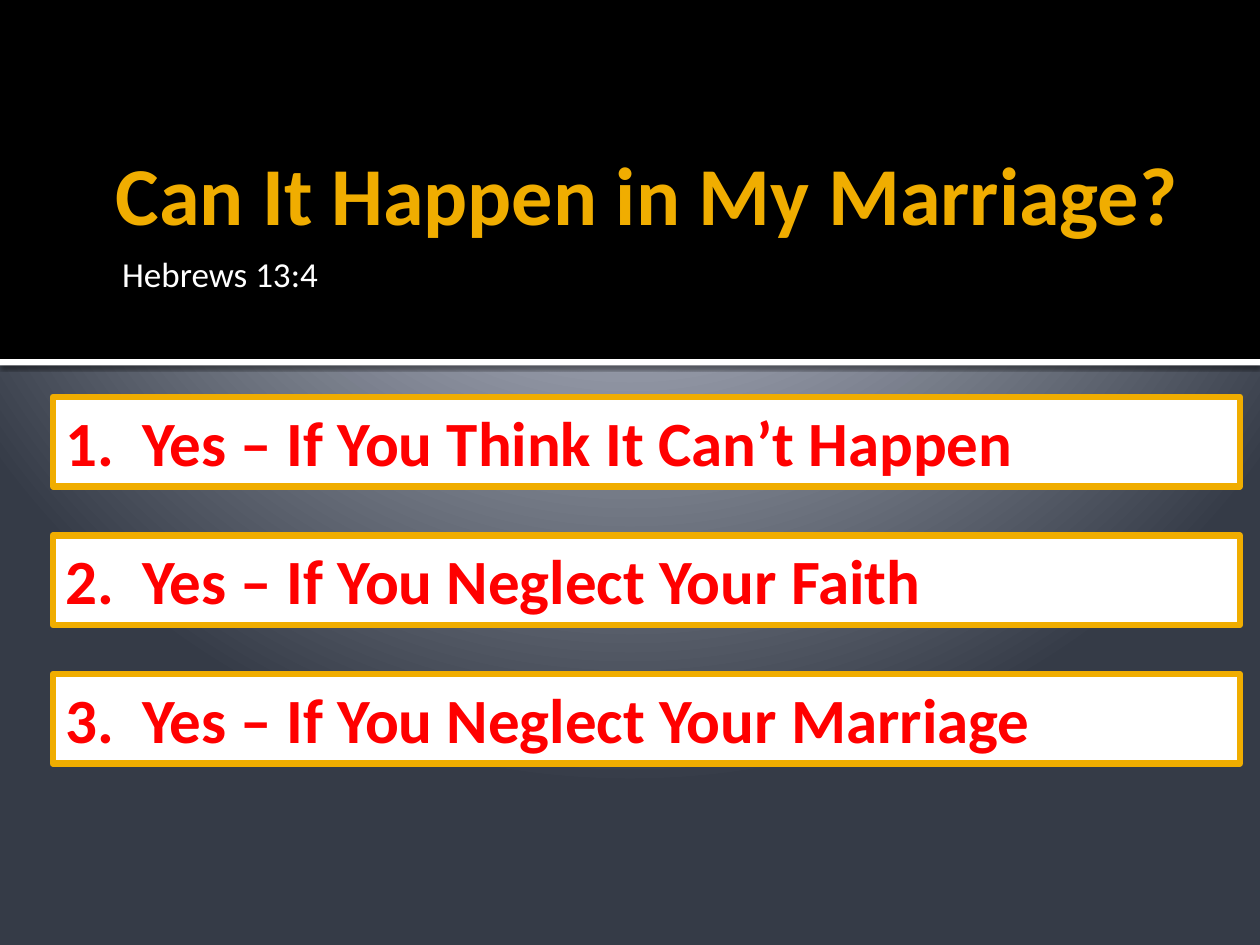
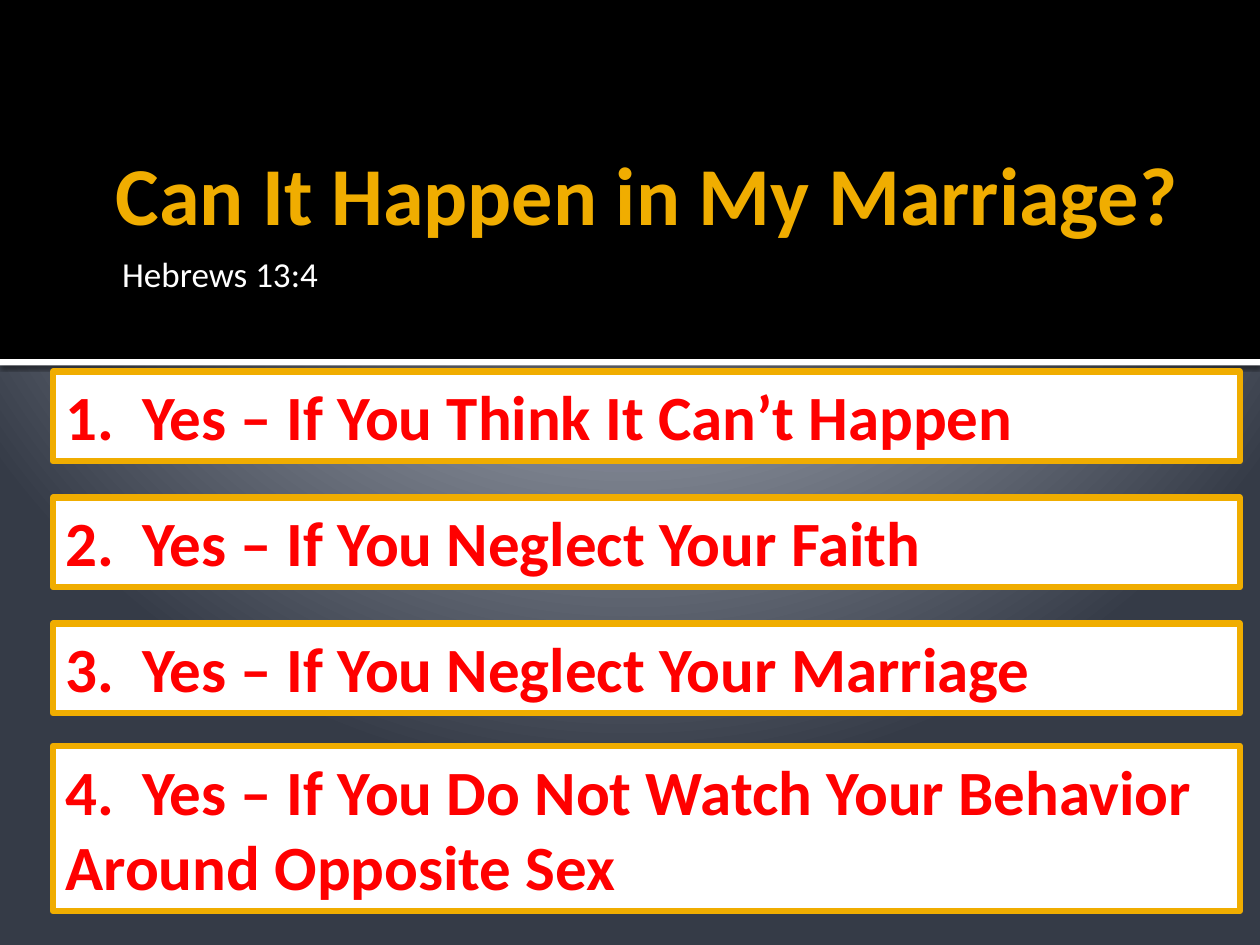
"""Build two outline slides that answer one question about marriage."""
from dataclasses import dataclass

from lxml import etree
from pptx import Presentation
from pptx import util as u
from pptx.dml.color import RGBColor
from pptx.enum import shapes, text
from pptx.oxml import parse_xml
from pptx.oxml.ns import nsdecls, qn

PX = u.Inches(1) // 100
FONT = "Calibri"
BLACK = RGBColor(0x00, 0x00, 0x00)
WHITE = RGBColor(0xFF, 0xFF, 0xFF)
GOLD = RGBColor(0xF0, 0xAD, 0x00)
RED = RGBColor(0xFF, 0x00, 0x00)
MIST = RGBColor(0xC1, 0xC5, 0xD3)
HAZE = RGBColor(0xBF, 0xC4, 0xD2)
SLATE = RGBColor(0x35, 0x3B, 0x47)
GLOW_STOPS = ((0, MIST), (12, MIST), (20, HAZE), (100, SLATE))
NUMBER_TAB = 61


@dataclass(frozen=True)
class Area:
    left: int
    top: int
    width: int
    height: int

    def emu(self) -> tuple[int, int, int, int]:
        return self.left * PX, self.top * PX, self.width * PX, self.height * PX


@dataclass(frozen=True)
class Style:
    size: int
    color: RGBColor
    bold: bool = False
    insets: tuple[int, int, int, int] = (10, 5, 10, 5)
    anchor: text.MSO_ANCHOR = text.MSO_ANCHOR.TOP


@dataclass(frozen=True)
class Answer:
    wording: str
    height: int = 71


TITLE = Style(47, GOLD, True, (10, 0, 10, 0), text.MSO_ANCHOR.BOTTOM)
VERSE = Style(20, WHITE, insets=(16, 0, 5, 0))
ANSWER = Style(36, RED, True)
ANSWERS = (
    Answer("Yes – If You Think It Can’t Happen"),
    Answer("Yes – If You Neglect Your Faith"),
    Answer("Yes – If You Neglect Your Marriage"),
    Answer("Yes – If You Do Not Watch Your Behavior Around Opposite Sex", 131),
)
PAGE_TOPS = (
    tuple(range(315, 536, 110)),
    (*range(295, 496, 100), 592),
)


def paint_background(page) -> None:
    fill = page.background.fill
    fill.gradient()
    old = page.element.find(".//" + qn("a:gradFill"))
    stops = "".join(
        f'<a:gs pos="{place * 1000}"><a:srgbClr val="{color}"/></a:gs>'
        for place, color in GLOW_STOPS
    )
    glow = parse_xml(
        f'<a:gradFill {nsdecls("a")} rotWithShape="1"><a:gsLst>{stops}</a:gsLst>'
        '<a:path path="circle"><a:fillToRect l="10000" t="-25000" r="10000" b="125000"/>'
        "</a:path></a:gradFill>"
    )
    old.getparent().replace(old, glow)


def add_band(page, area: Area, color: RGBColor):
    band = page.shapes.add_shape(shapes.MSO_SHAPE.RECTANGLE, *area.emu())
    band.shadow.inherit = False
    band.fill.solid()
    band.fill.fore_color.rgb = color
    band.line.fill.background()
    return band


def add_shadow(band) -> None:
    effects = band.element.spPr.find(qn("a:effectLst"))
    shadow = etree.SubElement(
        effects, qn("a:outerShdw"), blurRad=str(u.Pt(2.5)), dist=str(u.Pt(0.8)),
        dir="5400000", algn="tl", rotWithShape="0",
    )
    color = etree.SubElement(shadow, qn("a:srgbClr"), val=str(BLACK))
    etree.SubElement(color, qn("a:alpha"), val="60000")


def add_text(page, area: Area, wording: str, style: Style):
    box = page.shapes.add_textbox(*area.emu())
    frame = box.text_frame
    frame.word_wrap = True
    frame.vertical_anchor = style.anchor
    left, top, right, bottom = (inset * PX for inset in style.insets)
    frame.margin_left, frame.margin_top = left, top
    frame.margin_right, frame.margin_bottom = right, bottom
    para = frame.paragraphs[0]
    para.text = wording
    para.font.name = FONT
    para.font.size = u.Pt(style.size)
    para.font.bold = style.bold
    para.font.color.rgb = style.color
    return box


def add_answer(page, number: int, top: int, answer: Answer) -> None:
    area = Area(42, top, 942, answer.height)
    box = add_text(page, area, f"{number}.\t{answer.wording}", ANSWER)
    box.text_frame.auto_size = text.MSO_AUTO_SIZE.SHAPE_TO_FIT_TEXT
    box.fill.solid()
    box.fill.fore_color.rgb = WHITE
    box.line.color.rgb = GOLD
    box.line.width = u.Pt(3.78)
    properties = box.text_frame.paragraphs[0]._p.get_or_add_pPr()
    tabs = etree.Element(qn("a:tabLst"))
    etree.SubElement(tabs, qn("a:tab"), pos=str(NUMBER_TAB * PX), algn="l")
    properties.insert(0, tabs)


def add_page(deck, tops: tuple[int, ...]) -> None:
    page = deck.slides.add_slide(deck.slide_layouts[6])
    paint_background(page)
    add_band(page, Area(0, 0, 1000, 285), BLACK)
    add_shadow(add_band(page, Area(0, 285, 1000, 5), WHITE))
    add_text(page, Area(82, 13, 876, 179), "Can It Happen in My Marriage?", TITLE)
    add_text(page, Area(81, 200, 877, 75), "Hebrews 13:4", VERSE)
    for number, (top, answer) in enumerate(zip(tops, ANSWERS), start=1):
        add_answer(page, number, top, answer)


def main() -> None:
    deck = Presentation()
    deck.slide_width, deck.slide_height = 1000 * PX, 750 * PX
    for tops in PAGE_TOPS:
        add_page(deck, tops)
    deck.save("out.pptx")


if __name__ == "__main__":
    main()
